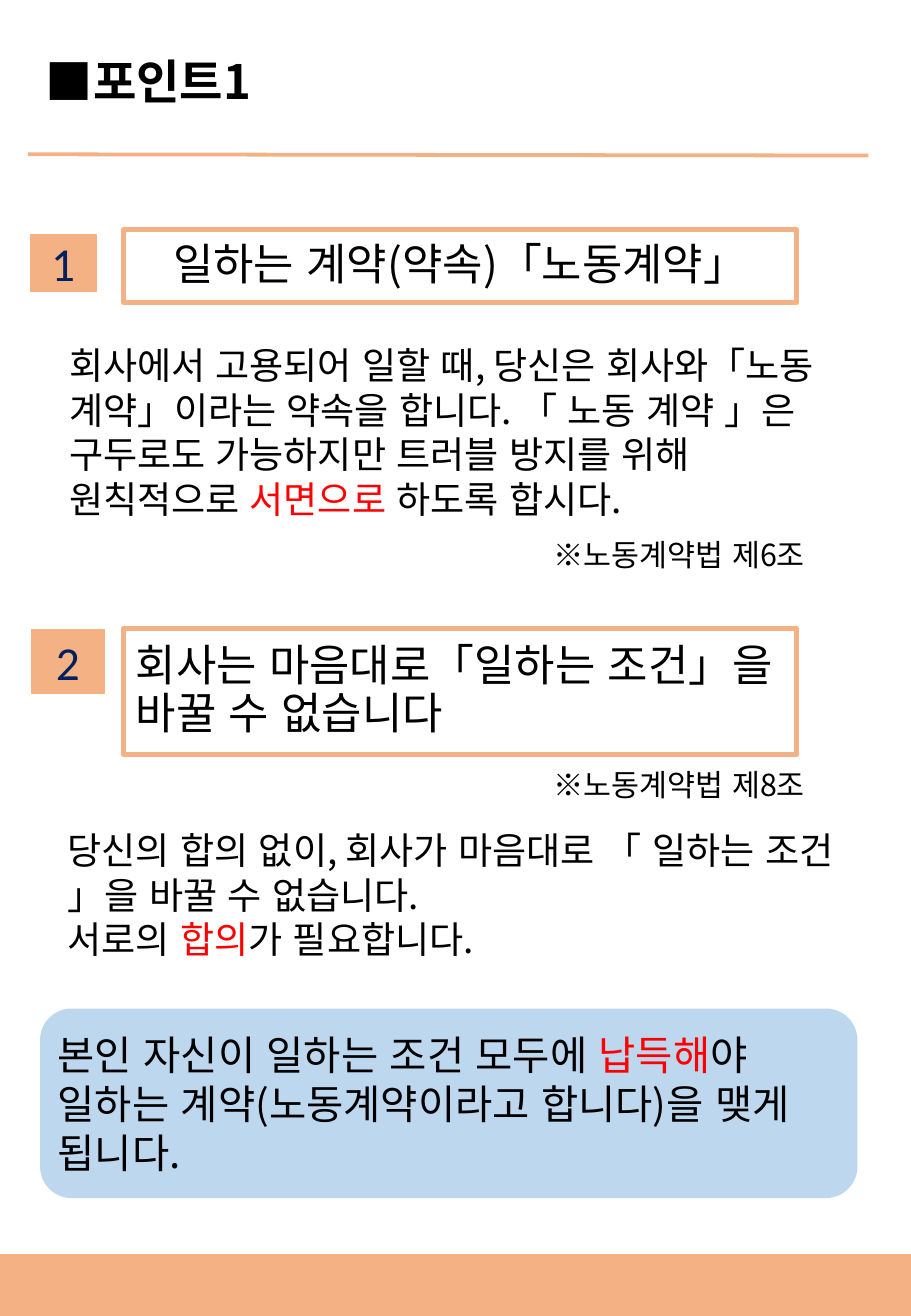
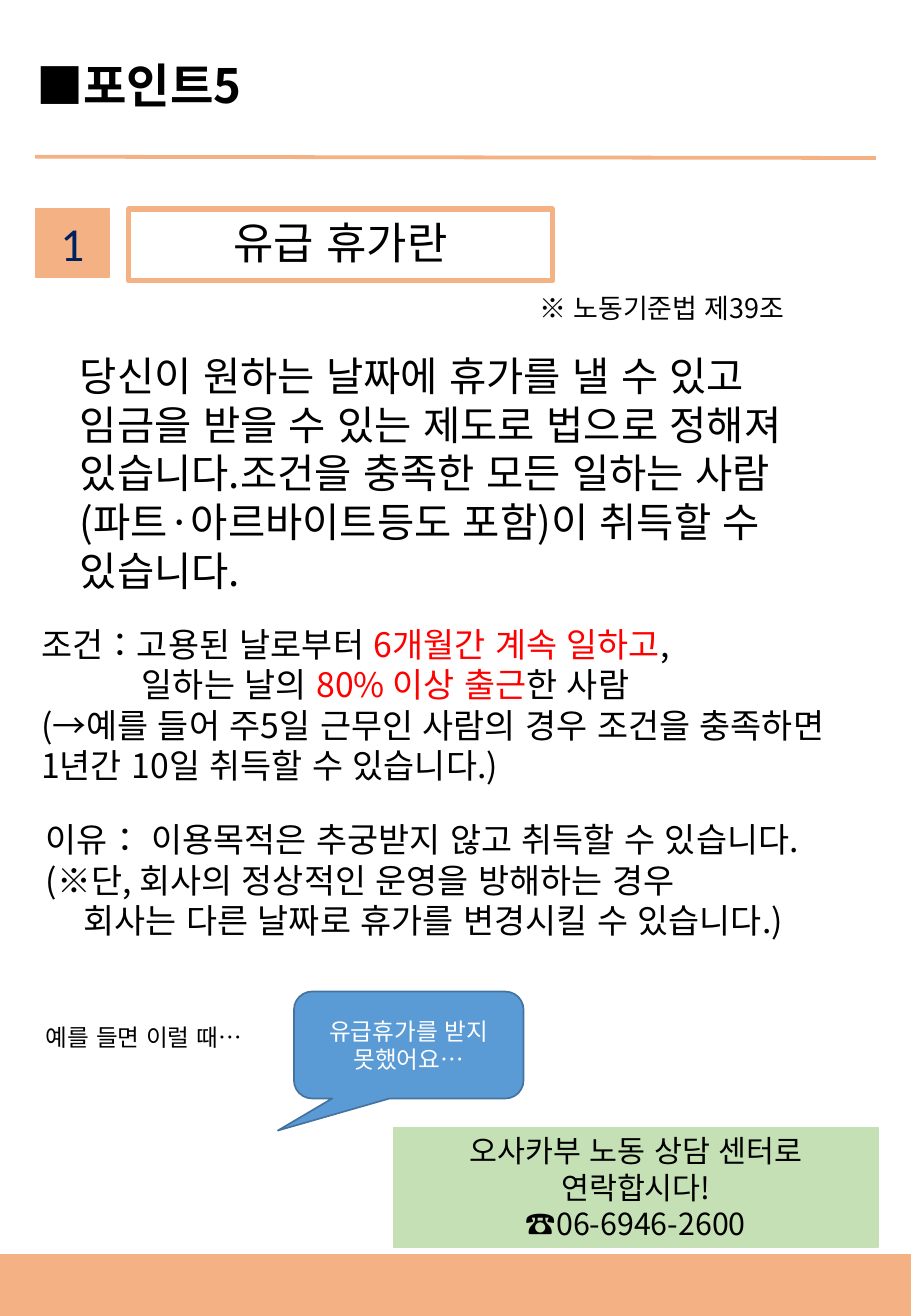
from dataclasses import dataclass, replace

from lxml.etree import SubElement
from pptx import Presentation
from pptx.dml.color import RGBColor
from pptx.enum.lang import MSO_LANGUAGE_ID
from pptx.enum.shapes import MSO_CONNECTOR, MSO_SHAPE
from pptx.enum.text import MSO_ANCHOR, PP_ALIGN
from pptx.oxml.ns import qn
from pptx.shapes.autoshape import Shape
from pptx.slide import Slide
from pptx.util import Inches, Pt

ORANGE = RGBColor(0xF4, 0xB1, 0x83)
LIGHT_BLUE = RGBColor(0xBD, 0xD7, 0xEE)
BLUE = RGBColor(0x5B, 0x9B, 0xD5)
DARK_BLUE = RGBColor(0x43, 0x73, 0x9E)
NAVY = RGBColor(0x00, 0x20, 0x60)
GREEN = RGBColor(0xC5, 0xE0, 0xB4)
RED = RGBColor(0xFF, 0x00, 0x00)
BLACK = RGBColor(0x00, 0x00, 0x00)
WHITE = RGBColor(0xFF, 0xFF, 0xFF)

KOREAN_FONT = "Noto Sans CJK KR"
NUMBER_FONT = "Calibri"
WIDTH, HEIGHT = 7.5, 10.83
BAND_HEIGHT = 0.5
EMPHASIS = "*"


@dataclass(frozen=True)
class Box:
    left: float
    top: float
    width: float
    height: float


@dataclass(frozen=True)
class TextStyle:
    size: float
    color: RGBColor = BLACK
    font: str = KOREAN_FONT
    bold: bool = False
    align: PP_ALIGN = PP_ALIGN.LEFT
    line_spacing: float = 1.0
    space_before: float = 0


@dataclass(frozen=True)
class Line:
    text: str
    indent: float = 0


@dataclass(frozen=True)
class TextBlock:
    box: Box
    size: float
    lines: tuple[Line, ...]


@dataclass(frozen=True)
class Section:
    number: str
    badge: Box
    heading: str
    frame: Box
    align: PP_ALIGN = PP_ALIGN.CENTER


@dataclass(frozen=True)
class Page:
    title: str
    title_left: float
    title_top: float
    rule_left: float
    rule_top: float
    sections: tuple[Section, ...]
    blocks: tuple[TextBlock, ...]


TITLE = TextStyle(28, bold=True)
HEADING = TextStyle(26, line_spacing=0.9, space_before=10)
BADGE = TextStyle(28, NAVY, NUMBER_FONT, align=PP_ALIGN.CENTER)


def write_text(shape: Shape, lines: tuple[Line, ...], style: TextStyle) -> None:
    text_frame = shape.text_frame
    text_frame.word_wrap = True
    for index, line in enumerate(lines):
        paragraph = text_frame.add_paragraph() if index else text_frame.paragraphs[0]
        paragraph.alignment = style.align
        paragraph.line_spacing = style.line_spacing
        paragraph.space_before = Pt(style.space_before)
        if line.indent:
            paragraph._p.get_or_add_pPr().set("marL", str(Inches(line.indent)))
        for position, segment in enumerate(line.text.split(EMPHASIS)):
            run = paragraph.add_run()
            run.text = segment
            font = run.font
            font.size = Pt(style.size)
            font.bold = style.bold
            font.name = style.font
            font.language_id = MSO_LANGUAGE_ID.KOREAN
            font.color.rgb = RED if position % 2 else style.color
            SubElement(run._r.get_or_add_rPr(), qn("a:ea"), typeface=style.font)


def add_text(slide: Slide, box: Box, lines: tuple[Line, ...], style: TextStyle) -> None:
    shape = slide.shapes.add_textbox(
        Inches(box.left), Inches(box.top), Inches(box.width), Inches(box.height))
    write_text(shape, lines, style)


def add_panel(slide: Slide, kind: MSO_SHAPE, box: Box, fill: RGBColor,
              outline: RGBColor | None = None, outline_width: float = 1) -> Shape:
    shape = slide.shapes.add_shape(
        kind, Inches(box.left), Inches(box.top), Inches(box.width), Inches(box.height))
    shape.shadow.inherit = False
    shape.fill.solid()
    shape.fill.fore_color.rgb = fill
    if outline is None:
        shape.line.fill.background()
    else:
        shape.line.color.rgb = outline
        shape.line.width = Pt(outline_width)
    shape.text_frame.vertical_anchor = MSO_ANCHOR.MIDDLE
    return shape


def set_margins(shape: Shape, horizontal: float, vertical: float) -> None:
    text_frame = shape.text_frame
    text_frame.margin_left = text_frame.margin_right = Inches(horizontal)
    text_frame.margin_top = text_frame.margin_bottom = Inches(vertical)


def add_section(slide: Slide, section: Section) -> None:
    badge = add_panel(slide, MSO_SHAPE.RECTANGLE, section.badge, ORANGE, ORANGE, 0.75)
    set_margins(badge, 0.03, 0)
    write_text(badge, (Line(section.number),), BADGE)
    frame = add_panel(slide, MSO_SHAPE.RECTANGLE, section.frame, WHITE, ORANGE, 3)
    write_text(frame, (Line(section.heading),), replace(HEADING, align=section.align))


def add_page(presentation: Presentation, page: Page) -> Slide:
    slide = presentation.slides.add_slide(presentation.slide_layouts[6])
    rule = slide.shapes.add_connector(
        MSO_CONNECTOR.STRAIGHT, Inches(page.rule_left), Inches(page.rule_top),
        Inches(page.rule_left + 6.92), Inches(page.rule_top + 0.01))
    rule.line.color.rgb = ORANGE
    rule.line.width = Pt(2.25)
    SubElement(rule._element.spPr, qn("a:effectLst"))
    add_text(slide, Box(page.title_left, page.title_top, 4.56, 0.57),
             (Line(page.title),), TITLE)
    for section in page.sections:
        add_section(slide, section)
    for block in page.blocks:
        add_text(slide, block.box, block.lines, TextStyle(block.size))
    add_panel(slide, MSO_SHAPE.RECTANGLE,
              Box(0, HEIGHT - BAND_HEIGHT, WIDTH, BAND_HEIGHT), ORANGE, ORANGE)
    return slide


CONTRACT_PAGE = Page(
    "■포인트1", 0.28, 0.38, 0.23, 1.27,
    (
        Section("1", Box(0.25, 1.93, 0.54, 0.47),
                "일하는 계약(약속)「노동계약」", Box(1.02, 1.89, 5.54, 0.6)),
        Section("2", Box(0.26, 5.18, 0.6, 0.53),
                "회사는 마음대로「일하는 조건」을 바꿀 수 없습니다",
                Box(1.02, 5.17, 5.54, 1.04), PP_ALIGN.LEFT),
    ),
    (
        TextBlock(Box(0.47, 2.77, 6.56, 1.58), 22, (
            Line("회사에서 고용되어 일할 때, 당신은 회사와「노동 계약」이라는 약속을 합니다. "
                 "「 노동 계약 」은 구두로도 가능하지만 트러블 방지를 위해 원칙적으로 "
                 "*서면으로* 하도록 합시다."),)),
        TextBlock(Box(4.46, 4.36, 2.6, 0.4), 18, (Line("※노동계약법 제6조"),)),
        TextBlock(Box(4.46, 6.26, 2.6, 0.4), 18, (Line("※노동계약법 제8조"),)),
        TextBlock(Box(0.46, 6.76, 6.57, 1.21), 22, (
            Line("당신의 합의 없이, 회사가 마음대로 「 일하는 조건 」을 바꿀 수 없습니다."),
            Line("서로의 *합의*가 필요합니다."))),
    ),
)

HOLIDAY_PAGE = Page(
    "■포인트5", 0.2, 0.41, 0.29, 1.29,
    (Section("1", Box(0.29, 1.72, 0.61, 0.56), "유급 휴가란", Box(1.06, 1.72, 3.49, 0.59)),),
    (
        TextBlock(Box(4.34, 2.35, 2.51, 0.37), 16, (Line("※ 노동기준법 제39조"),)),
        TextBlock(Box(0.56, 2.84, 6.44, 2.12), 24, (
            Line("당신이 원하는 날짜에 휴가를 낼 수 있고 임금을 받을 수 있는 제도로 법으로 "
                 "정해져 있습니다.조건을 충족한 모든 일하는 사람(파트·아르바이트등도 포함)이 "
                 "취득할 수 있습니다."),)),
        TextBlock(Box(0.24, 5.08, 7.26, 1.45), 20, (
            Line("조건：고용된 날로부터 *6개월간 계속 일하고*,"),
            Line("일하는 날의 *80% 이상 출근*한 사람", 0.83),
            Line("(→예를 들어 주5일 근무인 사람의 경우 조건을 충족하면"),
            Line("1년간 10일 취득할 수 있습니다.)"))),
        TextBlock(Box(0.28, 6.69, 7.07, 1.11), 20, (
            Line("이유： 이용목적은 추궁받지 않고 취득할 수 있습니다."),
            Line("(※단, 회사의 정상적인 운영을 방해하는 경우"),
            Line("회사는 다른 날짜로 휴가를 변경시킬 수 있습니다.)", 0.31))),
        TextBlock(Box(0.28, 8.37, 2.02, 0.34), 14, (Line("예를 들면 이럴 때…"),)),
    ),
)


def add_summary(slide: Slide) -> None:
    summary = add_panel(slide, MSO_SHAPE.ROUNDED_RECTANGLE,
                        Box(0.33, 8.3, 6.73, 1.56), LIGHT_BLUE)
    set_margins(summary, 0.07, 0.03)
    write_text(summary, (
        Line("본인 자신이 일하는 조건 모두에 *납득해*야 "
             "일하는 계약(노동계약이라고 합니다)을 맺게 됩니다."),), TextStyle(24))


def add_consultation(slide: Slide) -> None:
    callout = add_panel(slide, MSO_SHAPE.ROUNDED_RECTANGULAR_CALLOUT,
                        Box(2.42, 8.16, 1.89, 0.88), BLUE, DARK_BLUE)
    for index, value in enumerate((-0.57, 0.8, 0.17)):
        callout.adjustments[index] = value
    write_text(callout, (Line("유급휴가를 받지 못했어요…"),),
               TextStyle(14, WHITE, align=PP_ALIGN.CENTER))
    contact = add_panel(slide, MSO_SHAPE.RECTANGLE,
                        Box(3.24, 9.28, 3.99, 0.98), GREEN, GREEN)
    write_text(contact, (
        Line("오사카부 노동 상담 센터로"),
        Line("연락합시다!"),
        Line("☎06-6946-2600")), TextStyle(18, align=PP_ALIGN.CENTER))


def main() -> None:
    presentation = Presentation()
    presentation.slide_width = Inches(WIDTH)
    presentation.slide_height = Inches(HEIGHT)
    add_summary(add_page(presentation, CONTRACT_PAGE))
    add_consultation(add_page(presentation, HOLIDAY_PAGE))
    presentation.save("out.pptx")


if __name__ == "__main__":
    main()
